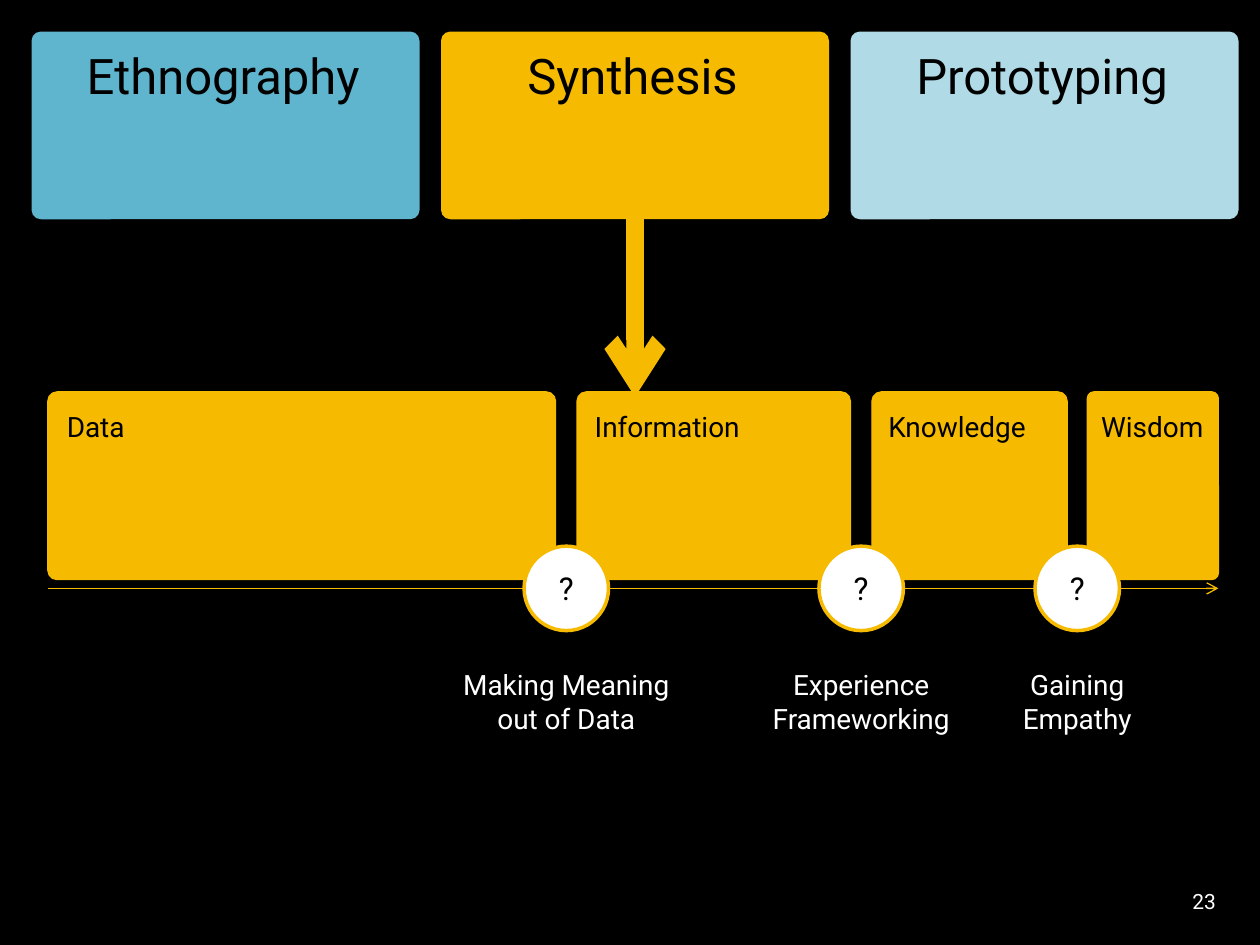
from lxml import etree
from pptx import Presentation
from pptx.dml.color import RGBColor
from pptx.enum.shapes import MSO_CONNECTOR, MSO_SHAPE as Shape
from pptx.enum.text import MSO_ANCHOR as Anchor, PP_ALIGN as Align
from pptx.oxml.ns import qn
from pptx.util import Inches, Pt

COLORS = {
    "black": "000000",
    "white": "FFFFFF",
    "gold": "F6BB00",
    "blue": "5FB5CD",
    "pale blue": "B0DAE6",
}
FONT = "Roboto"
BLOCK_HEIGHT = 1.49
PHASE_TOP, PHASE_WIDTH, PHASE_STEP = 0.25, 3.08, 3.25
STAGE_TOP, AXIS_Y = 3.11, 4.67
CIRCLE, CAPTION_WIDTH = 0.67, 1.9

PHASES = [("Ethnography", "blue"), ("Synthesis", "gold"), ("Prototyping", "pale blue")]
# name, left, width, label inset
STAGES = [
    ("Data", 0.38, 4.03, 0.15),
    ("Information", 4.58, 2.17, 0.14),
    ("Knowledge", 6.92, 1.55, 0.13),
    ("Wisdom", 8.63, 1.04, 0.11),
]
CAPTIONS = [["Making Meaning out of Data"], ["Experience Frameworking"], ["Gaining", "Empathy"]]


def rgb(name):
    return RGBColor.from_string(COLORS[name])


class SlideBuilder:
    def __init__(self, page):
        self.page = page
        page.background.fill.solid()
        page.background.fill.fore_color.rgb = rgb("black")

    def shape(self, kind, left, top, width, height, fill, line=None, line_width=0.75):
        shape = self.page.shapes.add_shape(
            kind, Inches(left), Inches(top), Inches(width), Inches(height))
        shape.shadow.inherit = False
        shape.fill.solid()
        shape.fill.fore_color.rgb = rgb(fill)
        if line:
            shape.line.color.rgb = rgb(line)
            shape.line.width = Pt(line_width)
        else:
            shape.line.fill.background()
        return shape

    def block(self, left, top, width, fill, line=None):
        block = self.shape(Shape.ROUNDED_RECTANGLE, left, top, width, BLOCK_HEIGHT, fill, line)
        block.adjustments[0] = 0.05
        return block

    def fill_text(self, frame, lines, size, color, align=Align.CENTER, anchor=Anchor.MIDDLE):
        frame.word_wrap = True
        frame.vertical_anchor = anchor
        for index, line in enumerate(lines):
            para = frame.add_paragraph() if index else frame.paragraphs[0]
            para.alignment = align
            span = para.add_run()
            span.text = line
            span.font.name = FONT
            span.font.size = Pt(size)
            span.font.color.rgb = rgb(color)

    def text(self, left, top, width, height, lines, size, color, inset=True, **layout):
        box = self.page.shapes.add_textbox(
            Inches(left), Inches(top), Inches(width), Inches(height))
        frame = box.text_frame
        if not inset:
            frame.margin_left = frame.margin_right = 0
            frame.margin_top = frame.margin_bottom = 0
        self.fill_text(frame, lines, size, color, **layout)

    def arrow(self, start, end, width, source=None):
        points = [Inches(value) for value in (*start, *end)]
        arrow = self.page.shapes.add_connector(MSO_CONNECTOR.STRAIGHT, *points)
        if source is not None:
            arrow.begin_connect(source, 2)
        arrow.line.color.rgb = rgb("gold")
        arrow.line.width = Pt(width)
        properties = arrow._element.spPr
        etree.SubElement(properties.find(qn("a:ln")), qn("a:tailEnd"), type="arrow")
        etree.SubElement(properties, qn("a:effectLst"))


def main():
    deck = Presentation()
    deck.slide_width, deck.slide_height = Inches(10), Inches(7.5)
    slide = SlideBuilder(deck.slides.add_slide(deck.slide_layouts[6]))

    slide.arrow((0.38, AXIS_Y), (9.67, AXIS_Y), 0.75)
    for name, left, width, inset in STAGES:
        slide.block(left, STAGE_TOP, width, "gold", "gold")
        slide.text(left + inset, 3.25, width - inset, 0.27, [name], 16, "black",
                   inset=False, align=Align.LEFT)

    # Each question sits on the axis, midway between two stages.
    for before, after, caption in zip(STAGES, STAGES[1:], CAPTIONS):
        center = (before[1] + before[2] + after[1]) / 2
        circle = slide.shape(Shape.OVAL, center - CIRCLE / 2, AXIS_Y - CIRCLE / 2,
                             CIRCLE, CIRCLE, "white", "gold", 2)
        slide.fill_text(circle.text_frame, ["?"], 18, "black")
        slide.text(center - CAPTION_WIDTH / 2, 5.25, CAPTION_WIDTH, 0.64, caption,
                   16, "white", anchor=Anchor.TOP)

    phase_blocks = {}
    for index, (name, color) in enumerate(PHASES):
        left = 0.25 + index * PHASE_STEP
        phase_blocks[name] = slide.block(left, PHASE_TOP, PHASE_WIDTH, color)
        slide.text(left + 0.13, 0.36, 2.78, 0.47, [name], 28, "black", inset=False)

    middle = 0.25 + PHASE_STEP + PHASE_WIDTH / 2
    slide.arrow((middle, PHASE_TOP + BLOCK_HEIGHT), (middle, 3.15), 10,
                phase_blocks["Synthesis"])
    slide.text(7.42, 6.95, 2.33, 0.4, ["23"], 12, "white", align=Align.RIGHT)

    deck.save("out.pptx")


if __name__ == "__main__":
    main()
